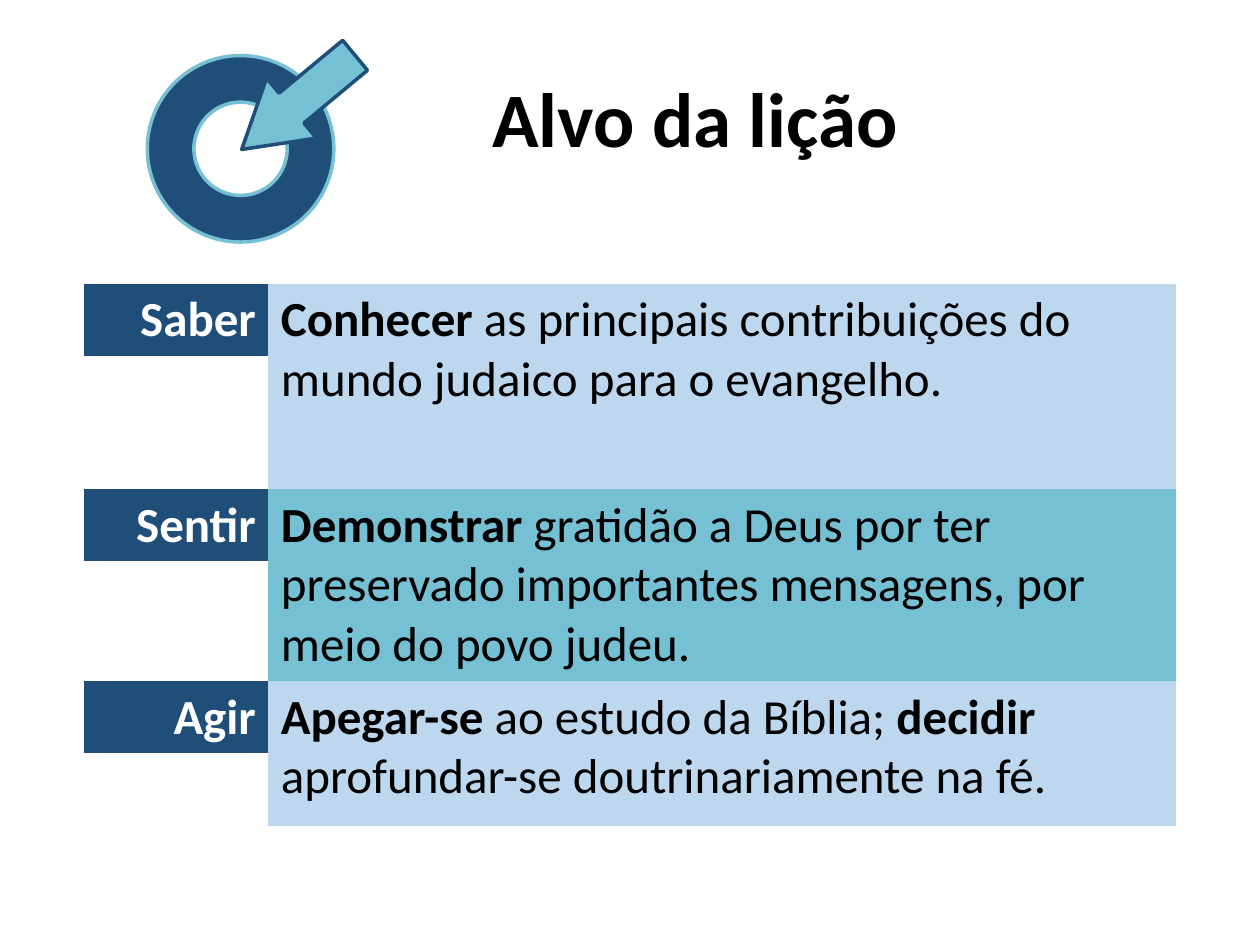
"""Build the lesson goal slide with a target icon and a table of aims."""
from pptx import Presentation
from pptx.dml.color import RGBColor
from pptx.enum import shapes, text
from pptx.oxml import ns
from pptx.util import Cm, Pt

NAVY = RGBColor(0x1F, 0x4E, 0x79)
TEAL = RGBColor(0x76, 0xC0, 0xD4)
PALE = RGBColor(0xBD, 0xD7, 0xEE)
BLACK = RGBColor(0, 0, 0)
WHITE = RGBColor(255, 255, 255)
PLAIN = "{2D5ABB26-0587-4C30-8999-92F81FD0307C}"


def write(para, words, size, color, bold=True):
    run = para.add_run()
    run.text = words
    look = {"name": "Calibri", "size": Pt(size), "bold": bold}
    for key, val in look.items():
        setattr(run.font, key, val)
    run.font.color.rgb = color


deck = Presentation()
deck.slide_width, deck.slide_height = Cm(25.4), Cm(19.05)
slide = deck.slides.add_slide(deck.slide_layouts[6])

title = slide.shapes.add_textbox(Cm(3.91), Cm(0.76), Cm(20.22), Cm(3.18))
frame = title.text_frame
look = {"word_wrap": True, "vertical_anchor": text.MSO_ANCHOR.MIDDLE}
for key, val in look.items():
    setattr(frame, key, val)
frame.paragraphs[0].alignment = text.PP_ALIGN.CENTER
write(frame.paragraphs[0], "Alvo da lição", 44, BLACK)

kinds = shapes.MSO_SHAPE
icon = [
    (kinds.DONUT, (2.97, 1.12, 3.76, 3.76), 0, [0.25], NAVY, TEAL),
    (kinds.DOWN_ARROW, (5.23, 0.58, 1.57, 2.97), 50.3, [0.5, 0.83], TEAL, NAVY),
]
for kind, box, turn, bends, fill, edge in icon:
    shape = slide.shapes.add_shape(kind, *map(Cm, box))
    shape.shadow.inherit = False
    shape.rotation = turn
    for pos, bend in enumerate(bends):
        shape.adjustments[pos] = bend
    shape.fill.solid()
    shape.fill.fore_color.rgb = fill
    shape.line.color.rgb = edge
    shape.line.width = Pt(2)

aims = [
    ("Saber", PALE, 2.69, [
        ("Conhecer", True),
        (" as principais contribuições do mundo judaico para o evangelho.", False)]),
    ("Sentir", TEAL, 2.42, [
        ("Demonstrar", True),
        (" gratidão a Deus por ter preservado importantes mensagens, "
         "por meio do povo judeu.", False)]),
    ("Agir", PALE, 1.47, [
        ("Apegar-se", True),
        (" ao estudo da Bíblia; ", False),
        ("decidir", True),
        (" aprofundar-se doutrinariamente na fé.", False)]),
]
high = 1.45
total = sum(aim[2] + high for aim in aims)
grid = slide.shapes.add_table(2 * len(aims), 2, Cm(1.7), Cm(5.72), Cm(22), Cm(total))
table = grid.table
for key in ("first_row", "horz_banding"):
    setattr(table, key, False)
for style in grid.element.iter(ns.qn("a:tableStyleId")):
    style.text = PLAIN
for col, wide in zip(table.columns, (3.71, 18.29)):
    col.width = Cm(wide)

for num, (label, shade, rest, parts) in enumerate(aims):
    top = 2 * num
    table.rows[top].height, table.rows[top + 1].height = Cm(high), Cm(rest)
    head, body = table.cell(top, 0), table.cell(top, 1)
    body.merge(table.cell(top + 1, 1))
    table.cell(top + 1, 0).fill.background()
    for cell, fill in ((head, NAVY), (body, shade)):
        cell.fill.solid()
        cell.fill.fore_color.rgb = fill
    para = head.text_frame.paragraphs[0]
    para.alignment = text.PP_ALIGN.RIGHT
    write(para, label, 28, WHITE)
    for words, bold in parts:
        write(body.text_frame.paragraphs[0], words, 28, BLACK, bold)

deck.save("out.pptx")
